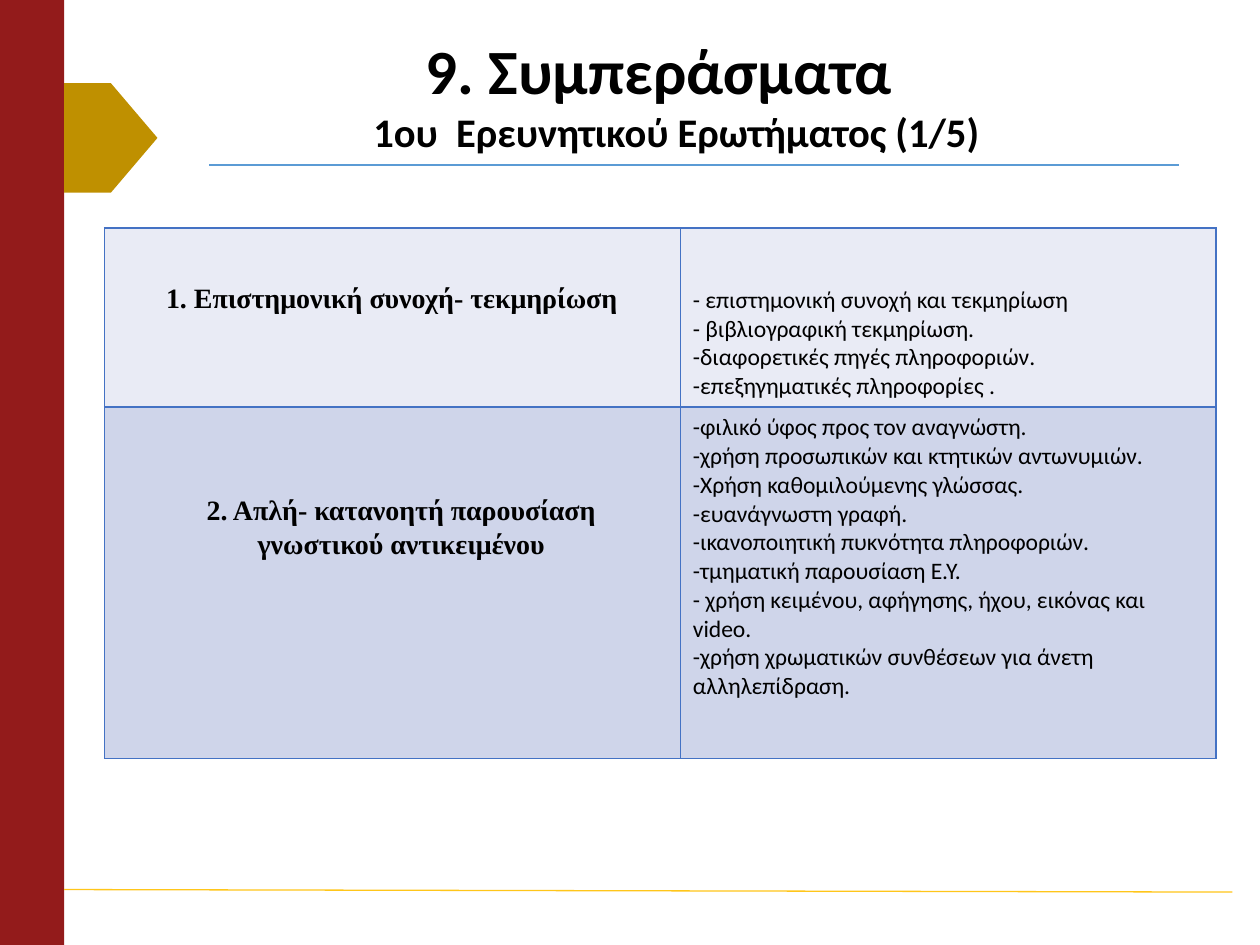
from dataclasses import dataclass

from lxml import etree
from pptx import Presentation
from pptx.dml.color import RGBColor
from pptx.enum.shapes import MSO_CONNECTOR, MSO_SHAPE
from pptx.enum.text import MSO_ANCHOR, PP_ALIGN
from pptx.oxml.ns import qn
from pptx.util import Inches, Pt

RECT = MSO_SHAPE.RECTANGLE
PENTAGON = MSO_SHAPE.PENTAGON
STRAIGHT = MSO_CONNECTOR.STRAIGHT
CENTER, LEFT = PP_ALIGN.CENTER, PP_ALIGN.LEFT
MIDDLE, TOP = MSO_ANCHOR.MIDDLE, MSO_ANCHOR.TOP


@dataclass(frozen=True)
class Theme:
    red: str = "931B1B"
    gold: str = "BF9000"
    blue: str = "5B9BD5"
    yellow: str = "FFC61A"
    border: str = "4472C4"
    black: str = "000000"
    sans: str = "Calibri"
    serif: str = "Times New Roman"
    title: float = 36
    subtitle: float = 40
    label: float = 16
    body: float = 13.5


@dataclass(frozen=True)
class Box:
    left: float
    top: float
    width: float
    height: float

    def emu(self):
        return [Inches(v) for v in (self.left, self.top, self.width, self.height)]


@dataclass(frozen=True)
class Criterion:
    label: str
    label_box: Box
    points: tuple[str, ...]
    height: float
    margin_top: float
    fill: str


THEME = Theme()
TABLE_BOX = Box(0.83, 1.81, 8.82, 4.21)
COLUMN_WIDTHS = (4.57, 4.25)
CRITERIA = (
    Criterion(
        "1. Επιστημονική συνοχή- τεκμηρίωση", Box(1.12, 2.18, 3.98, 0.37),
        ("- επιστημονική συνοχή και τεκμηρίωση",
         "- βιβλιογραφική τεκμηρίωση.",
         "-διαφορετικές πηγές πληροφοριών.",
         "-επεξηγηματικές πληροφορίες ."),
        1.42, 0.46, "E9EBF5"),
    Criterion(
        "2. Απλή- κατανοητή παρουσίαση γνωστικού αντικειμένου",
        Box(1.06, 3.86, 4.25, 0.64),
        ("-φιλικό ύφος προς τον αναγνώστη.",
         "-χρήση προσωπικών και κτητικών αντωνυμιών.",
         "-Χρήση καθομιλούμενης γλώσσας.",
         "-ευανάγνωστη γραφή.",
         "-ικανοποιητική πυκνότητα πληροφοριών.",
         "-τμηματική παρουσίαση Ε.Υ.",
         "- χρήση κειμένου, αφήγησης, ήχου, εικόνας και video.",
         "-χρήση χρωματικών συνθέσεων για άνετη αλληλεπίδραση."),
        2.79, 0.05, "CFD5EA"),
)


def rgb(color: str) -> RGBColor:
    return RGBColor.from_string(color)


def add_run(p, text: str, size: float, font: str, bold: bool = False):
    r = p.add_run()
    r.text = text
    r.font.size = Pt(size)
    r.font.name = font
    r.font.bold = bold
    r.font.color.rgb = rgb(THEME.black)
    return r


def add_block(s, kind, box: Box, color: str):
    sp = s.shapes.add_shape(kind, *box.emu())
    sp.shadow.inherit = False
    sp.fill.solid()
    sp.fill.fore_color.rgb = rgb(color)
    sp.line.fill.background()
    return sp


def add_rule(s, x1: float, y1: float, x2: float, y2: float, color: str) -> None:
    line = s.shapes.add_connector(STRAIGHT, *map(Inches, (x1, y1, x2, y2)))
    line.line.color.rgb = rgb(color)
    line.line.width = Pt(0.75)
    etree.SubElement(line._element.spPr, qn("a:effectLst"))


def add_text_frame(s, box: Box, anchor):
    tf = s.shapes.add_textbox(*box.emu()).text_frame
    tf.word_wrap = True
    tf.vertical_anchor = anchor
    return tf


def add_title(s) -> None:
    tf = add_text_frame(s, Box(0.98, 0.4, 8.5, 0.98), MIDDLE)
    heading, subtitle = tf.paragraphs[0], tf.add_paragraph()
    for p in (heading, subtitle):
        p.alignment = CENTER
        p.line_spacing = 0.9
    add_run(heading, "9. Συμπεράσματα", THEME.title, THEME.sans, True)
    r = add_run(subtitle, "1ου  Ερευνητικού Ερωτήματος (1/5)",
                THEME.subtitle, THEME.sans, True)
    r.font._element.set("baseline", "30000")
    # The subtitle sits slightly right of the heading
    subtitle._p.get_or_add_pPr().set("marL", str(Inches(0.28)))


def style_cell(cell, fill: str) -> None:
    tc_pr = cell._tc.get_or_add_tcPr()
    for side in ("lnL", "lnR", "lnT", "lnB"):
        ln = etree.SubElement(tc_pr, qn(f"a:{side}"), w=str(Pt(1)))
        solid = etree.SubElement(ln, qn("a:solidFill"))
        etree.SubElement(solid, qn("a:srgbClr"), val=THEME.border)
    cell.fill.solid()
    cell.fill.fore_color.rgb = rgb(fill)


def add_criteria_table(s) -> None:
    table = s.shapes.add_table(len(CRITERIA), len(COLUMN_WIDTHS),
                               *TABLE_BOX.emu()).table
    for column, width in zip(table.columns, COLUMN_WIDTHS):
        column.width = Inches(width)
    for row, criterion in zip(table.rows, CRITERIA):
        row.height = Inches(criterion.height)
        for cell in row.cells:
            style_cell(cell, criterion.fill)
        cell = row.cells[1]
        cell.margin_top = Inches(criterion.margin_top)
        tf = cell.text_frame
        for i, point in enumerate(criterion.points):
            p = tf.add_paragraph() if i else tf.paragraphs[0]
            p.alignment = LEFT
            add_run(p, point, THEME.body, THEME.sans)


def add_label(s, criterion: Criterion) -> None:
    p = add_text_frame(s, criterion.label_box, TOP).paragraphs[0]
    p.alignment = CENTER
    add_run(p, criterion.label, THEME.label, THEME.serif, True)


def main() -> None:
    prs = Presentation()
    prs.slide_width, prs.slide_height = Inches(10), Inches(7.5)
    s = prs.slides.add_slide(prs.slide_layouts[6])

    # Side band, marker and rules
    add_block(s, RECT, Box(0, 0, 0.51, 7.5), THEME.red)
    add_rule(s, 1.66, 1.31, 9.36, 1.31, THEME.blue)
    add_rule(s, 0.51, 7.06, 9.78, 7.08, THEME.yellow)
    marker = add_block(s, PENTAGON, Box(0.51, 0.66, 0.74, 0.87), THEME.gold)
    marker.adjustments[0] = 0.5

    # Title, table and the labels over its first column
    add_title(s)
    add_criteria_table(s)
    for criterion in CRITERIA:
        add_label(s, criterion)

    prs.save("out.pptx")


if __name__ == "__main__":
    main()
